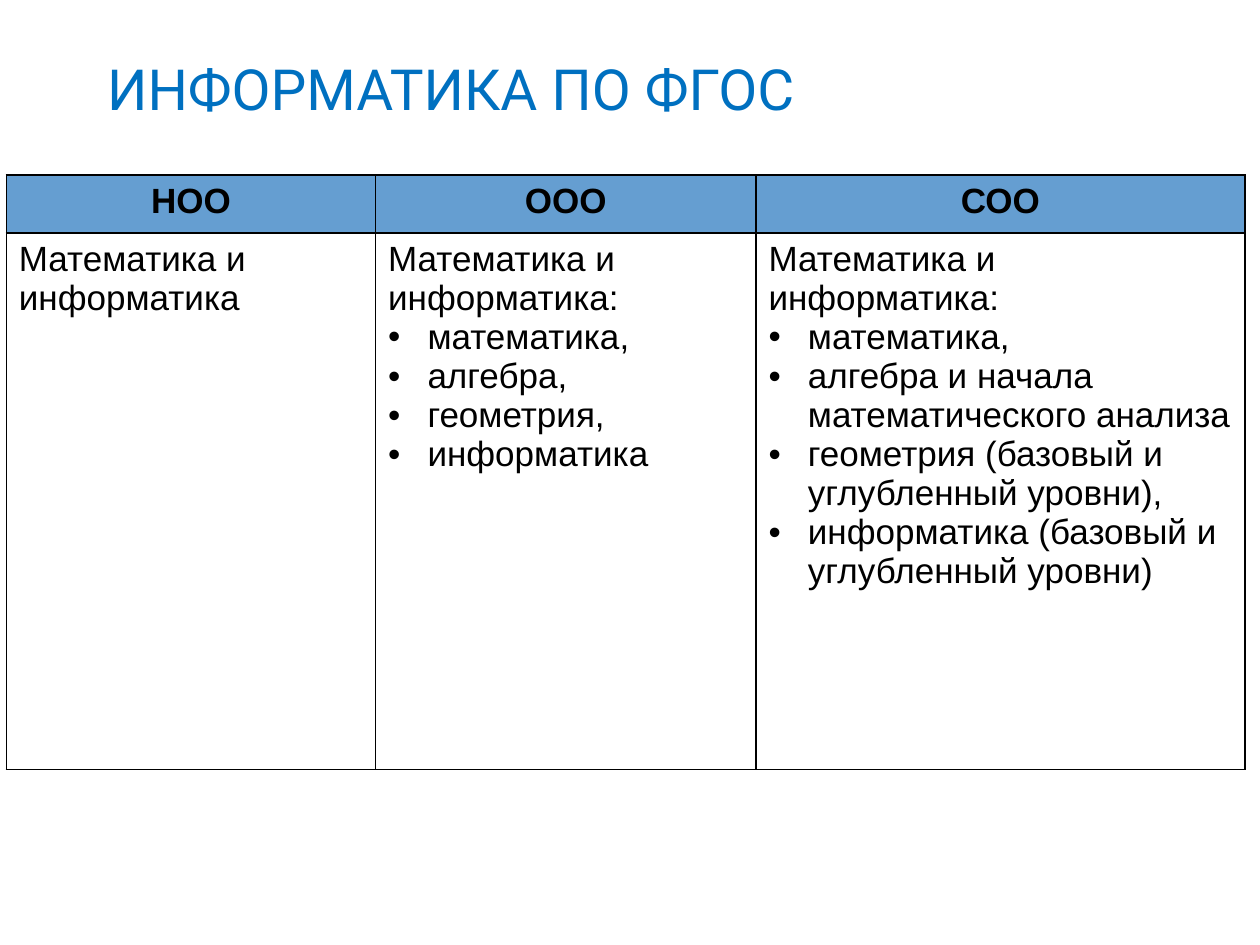
from pptx import Presentation
from pptx.dml.color import RGBColor
from pptx.enum.text import MSO_ANCHOR as Anchor, MSO_AUTO_SIZE as AutoSize, PP_ALIGN as Align
from pptx.oxml.ns import qn
from pptx.util import Pt
from lxml.etree import SubElement

COLORS = {"title": "0070C0", "header": "659ED1", "text": "000000", "border": "000000"}

TITLE = "ИНФОРМАТИКА ПО ФГОС"
SUBJECT_AREA = "Математика и информатика"
# Education level: (subject area, subjects)
LEVELS = {
    "НОО": (SUBJECT_AREA, []),
    "ООО": (SUBJECT_AREA + ":", ["математика,", "алгебра,", "геометрия,", "информатика"]),
    "СОО": (SUBJECT_AREA + ":", [
        "математика,",
        "алгебра и начала математического анализа",
        "геометрия (базовый и углубленный уровни),",
        "информатика (базовый и углубленный уровни)",
    ]),
}
COLUMN_WIDTHS = (211, 217.4, 279.4)
ROW_HEIGHTS = (33.1, 306.7)
INDENT = Pt(22.5)


class SlideBuilder:
    title_font, title_size = "Roboto", 32.4
    body_font, body_size = "Arial", 20
    border, thin_border = 1, 0.5

    def __init__(self, slide):
        self.slide = slide

    def add_run(self, paragraph, text, font, size, color, bold=False):
        run = paragraph.add_run()
        run.text = text
        run.font.name, run.font.size, run.font.bold = font, Pt(size), bold
        run.font.color.rgb = RGBColor.from_string(COLORS[color])

    def add_title(self, text, left, top, width, height):
        title = self.slide.shapes.title
        title.left, title.top, title.width, title.height = map(Pt, (left, top, width, height))
        frame = title.text_frame
        frame.auto_size, frame.vertical_anchor = AutoSize.NONE, Anchor.MIDDLE
        paragraph = frame.paragraphs[0]
        paragraph.alignment = Align.LEFT
        self.add_run(paragraph, text, self.title_font, self.title_size, "title")

    def add_table(self, left, top, widths, heights):
        table = self.slide.shapes.add_table(
            len(heights), len(widths), Pt(left), Pt(top), Pt(sum(widths)), Pt(sum(heights))
        ).table
        table.first_row = table.horz_banding = False
        for column, width in zip(table.columns, widths):
            column.width = Pt(width)
        for row, height in zip(table.rows, heights):
            row.height = Pt(height)
        return table

    def set_borders(self, cell, **widths):
        properties = cell._tc.get_or_add_tcPr()
        for side in "LRTB":
            line = SubElement(properties, qn(f"a:ln{side}"), w=str(Pt(widths.get(side, self.border))))
            fill = SubElement(line, qn("a:solidFill"))
            SubElement(fill, qn("a:srgbClr"), val=COLORS["border"])

    def add_header(self, cell, text):
        cell.fill.solid()
        cell.fill.fore_color.rgb = RGBColor.from_string(COLORS["header"])
        paragraph = cell.text_frame.paragraphs[0]
        paragraph.alignment = Align.CENTER
        self.add_run(paragraph, text, self.body_font, self.body_size, "text", bold=True)

    def add_subjects(self, cell, area, subjects):
        cell.fill.background()
        frame = cell.text_frame
        self.add_run(frame.paragraphs[0], area, self.body_font, self.body_size, "text")
        for subject in subjects:
            paragraph = frame.add_paragraph()
            properties = paragraph._p.get_or_add_pPr()
            properties.set("marL", str(INDENT))
            properties.set("indent", str(-INDENT))
            SubElement(properties, qn("a:buFont"), typeface=self.body_font)
            SubElement(properties, qn("a:buChar"), char="•")
            self.add_run(paragraph, subject, self.body_font, self.body_size, "text")


def main():
    presentation = Presentation()
    presentation.slide_width, presentation.slide_height = Pt(720), Pt(540)
    title_only = presentation.slide_layouts[5]
    builder = SlideBuilder(presentation.slides.add_slide(title_only))

    # Title
    builder.add_title(TITLE, 54, 28.8, 652.3, 43.2)

    # Subjects by education level, with a thin rule after the first column
    table = builder.add_table(3.6, 100.1, COLUMN_WIDTHS, ROW_HEIGHTS)
    thin_sides = ({"R": builder.thin_border}, {"L": builder.thin_border}, {})
    for column, (level, (area, subjects)) in enumerate(LEVELS.items()):
        header, body = table.cell(0, column), table.cell(1, column)
        for cell in (header, body):
            builder.set_borders(cell, **thin_sides[column])
        builder.add_header(header, level)
        builder.add_subjects(body, area, subjects)

    presentation.save("out.pptx")


if __name__ == "__main__":
    main()
